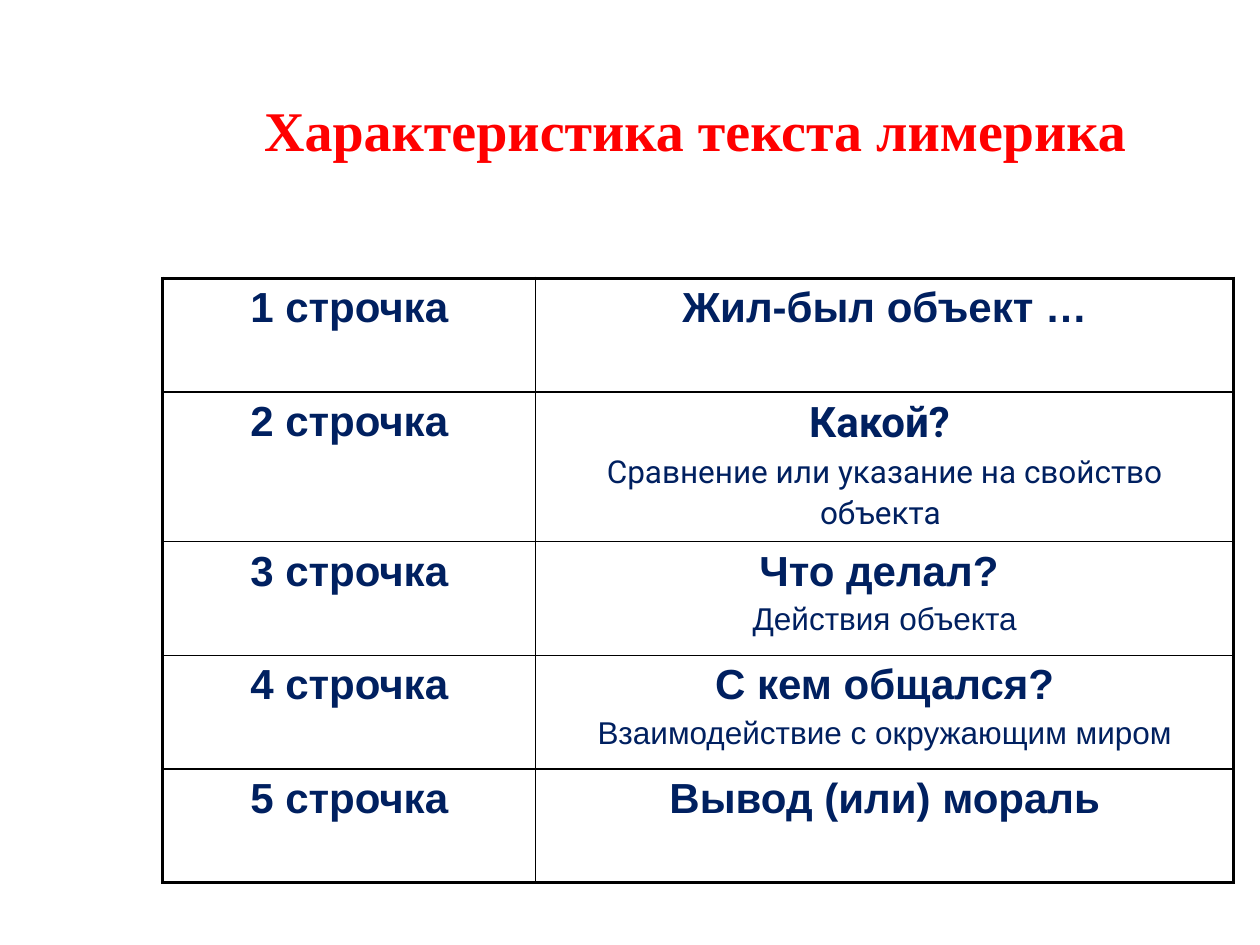
from lxml import etree
from pptx import Presentation
from pptx import util as u
from pptx.dml.color import RGBColor
from pptx.enum import text
from pptx.oxml import ns

NAVY, RED, BLACK = "002060", "FF0000", "000000"
THIN, THICK = 1, 2.25
COLUMN_WIDTHS = (7.52, 14.07)
ROW_HEIGHTS = (2.29, 2.46, 2.29, 2.29, 2.29)

# Each paragraph is a list of runs: (wording, size, bold, font)
ANSWERS = [
    [[("Жил-был объект …", 24, True, "Arial")]],
    [[("Какой? ", 24, True, "Roboto")],
     [("Сравнение или указание на свойство объекта", 18, False, "Roboto"),
      (" ", 20, False, "Roboto")]],
    [[("Что делал? ", 24, True, "Arial")],
     [("Действия объекта", 18, False, "Arial")]],
    [[("С кем общался?", 24, True, "Arial")],
     [("Взаимодействие с окружающим миром", 18, False, "Arial")]],
    [[("Вывод (или) мораль", 24, True, "Arial")]],
]


def colour(value):
    return RGBColor.from_string(value)


def write(frame, paragraphs, fill):
    """Fill a text frame with centred paragraphs made of formatted runs."""
    frame.word_wrap = True
    for index, runs in enumerate(paragraphs):
        paragraph = frame.add_paragraph() if index else frame.paragraphs[0]
        paragraph.alignment = text.PP_ALIGN.CENTER
        if index:
            paragraph.space_before = u.Pt(4)
        for wording, size, bold, font in runs:
            run = paragraph.add_run()
            run.text = wording
            run.font.size = u.Pt(size)
            run.font.bold = bold
            run.font.name = font
            run.font.color.rgb = colour(fill)


def add_border(cell, side, width):
    """Draw one cell border; side is L, R, T or B."""
    line = etree.SubElement(cell._tc.get_or_add_tcPr(), ns.qn(f"a:ln{side}"),
                            w=str(u.Pt(width)))
    solid = etree.SubElement(line, ns.qn("a:solidFill"))
    etree.SubElement(solid, ns.qn("a:srgbClr"), val=BLACK)


def add_title(slide):
    title = slide.shapes.add_textbox(u.Cm(3.2), u.Cm(0.58), u.Cm(21.64), u.Cm(4.06))
    title.text_frame.vertical_anchor = text.MSO_ANCHOR.MIDDLE
    write(title.text_frame,
          [[("Характеристика текста лимерика", 32, True, "Times New Roman")]], RED)


def add_limerick_table(slide):
    rows, columns = len(ROW_HEIGHTS), len(COLUMN_WIDTHS)
    table = slide.shapes.add_table(
        rows, columns, u.Cm(3.28), u.Cm(5.61),
        u.Cm(sum(COLUMN_WIDTHS)), u.Cm(sum(ROW_HEIGHTS))).table
    table.first_row = table.horz_banding = False
    for column, width in zip(table.columns, COLUMN_WIDTHS):
        column.width = u.Cm(width)
    for row, height in zip(table.rows, ROW_HEIGHTS):
        row.height = u.Cm(height)

    for r, answer in enumerate(ANSWERS):
        label = [[(f"{r + 1} строчка", 24, True, "Arial")]]
        for c, paragraphs in enumerate((label, answer)):
            cell = table.cell(r, c)
            write(cell.text_frame, paragraphs, NAVY)
            outer_sides = {"L": c == 0, "R": c == columns - 1,
                           "T": r == 0, "B": r == rows - 1}
            for side, is_outer in outer_sides.items():
                add_border(cell, side, THICK if is_outer else THIN)
            cell.fill.background()


def main():
    deck = Presentation()
    deck.slide_width, deck.slide_height = u.Cm(25.4), u.Cm(19.05)
    slide = deck.slides.add_slide(deck.slide_layouts[6])
    add_title(slide)
    add_limerick_table(slide)
    deck.save("out.pptx")


if __name__ == "__main__":
    main()
